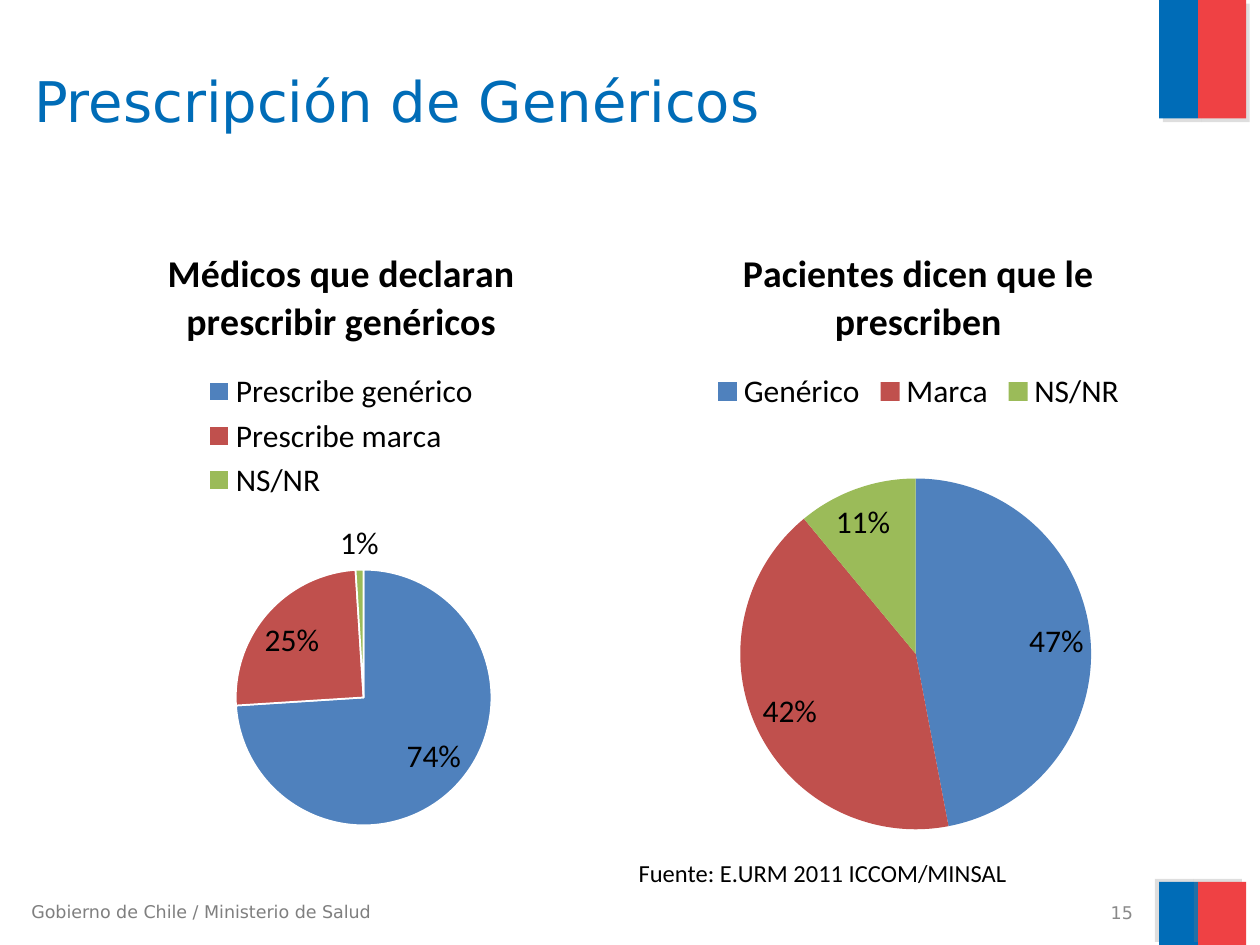
from dataclasses import dataclass

from lxml import etree
from pptx import Presentation
from pptx import util as u
from pptx.chart.data import CategoryChartData
from pptx.dml.color import RGBColor
from pptx.enum import chart as charts, shapes, text
from pptx.oxml import parse_xml
from pptx.oxml.ns import nsdecls, qn

BLUE = RGBColor(0x00, 0x6C, 0xB7)
RED = RGBColor(0xEF, 0x41, 0x44)
GREY = RGBColor(0x7F, 0x7F, 0x7F)
PAGE_GREY = RGBColor(0x89, 0x89, 0x89)
BLACK = RGBColor(0, 0, 0)
WHITE = RGBColor(0xFF, 0xFF, 0xFF)
PIE_COLORS = (RGBColor(0x4F, 0x81, 0xBD), RGBColor(0xC0, 0x50, 0x4D),
              RGBColor(0x9B, 0xBB, 0x59))
SANS, BODY = "DejaVu Sans", "Calibri"


@dataclass
class Band:
    left: float
    top: float
    width: float
    height: float
    color: RGBColor
    shadow_angle: int


@dataclass
class Label:
    wording: str
    left: float
    top: float
    width: float
    height: float
    size: int
    font: str
    color: RGBColor
    align: text.PP_ALIGN = text.PP_ALIGN.LEFT
    anchor: text.MSO_ANCHOR = text.MSO_ANCHOR.TOP
    wrap: bool = True


@dataclass
class Pie:
    title: str
    series: str
    left: float
    values: dict[str, int]
    plot_area: dict[str, float]  # fractions of the chart
    outlined: bool


BANDS = [
    Band(9.2, -0.01, 0.31, 0.95, BLUE, 45),
    Band(9.51, 0, 0.38, 0.94, RED, 45),
    Band(9.2, 7, 0.31, 0.5, BLUE, 215),
    Band(9.51, 7, 0.38, 0.5, RED, 215),
]
LABELS = [
    Label("Gobierno de Chile / Ministerio de Salud", 0.15, 7.1, 3.02, 0.27,
          10, SANS, GREY),
    Label("15", 6.76, 7.14, 2.33, 0.21, 10, SANS, PAGE_GREY,
          text.PP_ALIGN.RIGHT, text.MSO_ANCHOR.MIDDLE),
    Label("Fuente: E.URM 2011 ICCOM/MINSAL", 4.97, 6.76, 3.15, 0.34,
          14, BODY, BLACK, wrap=False),
]
PIES = [
    Pie("Médicos que declaran prescribir genéricos", "Series 1", 0.5,
        {"Prescribe genérico": 74, "Prescribe marca": 25, "NS/NR": 1},
        {"x": 0.31, "y": 0.56, "w": 0.46, "h": 0.41}, True),
    Pie("Pacientes dicen que le prescriben",
        "Pacientes dicen que le prescriben", 5.08,
        {"Genérico": 47, "Marca": 42, "NS/NR": 11},
        {"x": 0.18, "y": 0.41, "w": 0.63, "h": 0.57}, False),
]


def style_font(font, name: str, size: float, color: RGBColor) -> None:
    font.name = name
    font.size = u.Pt(size)
    font.color.rgb = color


def draw_band(slide, band: Band) -> None:
    shape = slide.shapes.add_shape(
        shapes.MSO_SHAPE.RECTANGLE, u.Inches(band.left), u.Inches(band.top),
        u.Inches(band.width), u.Inches(band.height))
    shape.fill.solid()
    shape.fill.fore_color.rgb = band.color
    shape.line.fill.background()
    shape._element.spPr.append(parse_xml(
        f'<a:effectLst {nsdecls("a")}><a:outerShdw blurRad="0" '
        f'dist="{u.Pt(3)}" dir="{band.shadow_angle * 60000}" algn="ctr" '
        'rotWithShape="0"><a:srgbClr val="808080"><a:alpha val="25000"/>'
        '</a:srgbClr></a:outerShdw></a:effectLst>'))


def draw_label(slide, label: Label) -> None:
    box = slide.shapes.add_textbox(
        u.Inches(label.left), u.Inches(label.top),
        u.Inches(label.width), u.Inches(label.height))
    frame = box.text_frame
    frame.word_wrap = label.wrap
    frame.vertical_anchor = label.anchor
    paragraph = frame.paragraphs[0]
    paragraph.text = label.wording
    paragraph.alignment = label.align
    style_font(paragraph.font, label.font, label.size, label.color)


def place_plot(chart, area: dict[str, float]) -> None:
    plot_area = chart._chartSpace.chart.plotArea
    for old in plot_area.findall(qn("c:layout")):
        plot_area.remove(old)
    layout = etree.Element(qn("c:layout"))
    manual = etree.SubElement(layout, qn("c:manualLayout"))
    settings = {"layoutTarget": "inner", "xMode": "edge", "yMode": "edge", **area}
    for tag, value in settings.items():
        etree.SubElement(manual, qn(f"c:{tag}")).set("val", str(value))
    plot_area.insert(0, layout)


def draw_pie(slide, pie: Pie) -> None:
    data = CategoryChartData()
    data.categories = list(pie.values)
    data.add_series(pie.series, list(pie.values.values()))
    chart = slide.shapes.add_chart(
        charts.XL_CHART_TYPE.PIE, u.Inches(pie.left), u.Inches(1.75),
        u.Inches(4.42), u.Inches(4.95), data).chart
    style_font(chart.font, BODY, 18, BLACK)

    # Title and legend
    chart.has_title = True
    chart.chart_title.include_in_layout = False
    paragraph = chart.chart_title.text_frame.paragraphs[0]
    paragraph.text = pie.title
    style_font(paragraph.font, BODY, 21.6, BLACK)
    paragraph.font.bold = True
    chart.has_legend = True
    chart.legend.position = charts.XL_LEGEND_POSITION.TOP
    chart.legend.include_in_layout = False
    place_plot(chart, pie.plot_area)

    # Slices and percentages
    plot = chart.plots[0]
    plot.vary_by_categories = True
    for index, color in enumerate(PIE_COLORS):
        slice_format = plot.series[0].points[index].format
        slice_format.fill.solid()
        slice_format.fill.fore_color.rgb = color
        if pie.outlined:
            slice_format.line.color.rgb = WHITE
            slice_format.line.width = u.Pt(1)
        else:
            slice_format.line.fill.background()
    labels = plot.series[0].data_labels
    labels.show_value = False
    labels.show_percentage = True
    labels.number_format = "0%"
    labels.number_format_is_linked = False
    labels.position = charts.XL_LABEL_POSITION.BEST_FIT
    style_font(labels.font, BODY, 18, BLACK)


def main() -> None:
    presentation = Presentation()
    presentation.slide_width = u.Inches(10)
    presentation.slide_height = u.Inches(7.5)
    slide = presentation.slides.add_slide(presentation.slide_layouts[5])

    # Title
    title = slide.shapes.title
    title.left, title.top = u.Inches(0.17), u.Inches(0.17)
    title.width, title.height = u.Inches(8.93), u.Inches(1.25)
    title.text_frame.vertical_anchor = text.MSO_ANCHOR.MIDDLE
    paragraph = title.text_frame.paragraphs[0]
    paragraph.text = "Prescripción de Genéricos"
    paragraph.alignment = text.PP_ALIGN.LEFT
    style_font(paragraph.font, SANS, 32, BLUE)

    # Flag bands, charts and small print
    for band in BANDS:
        draw_band(slide, band)
    for pie in PIES:
        draw_pie(slide, pie)
    for label in LABELS:
        draw_label(slide, label)
    presentation.save("out.pptx")


if __name__ == "__main__":
    main()
